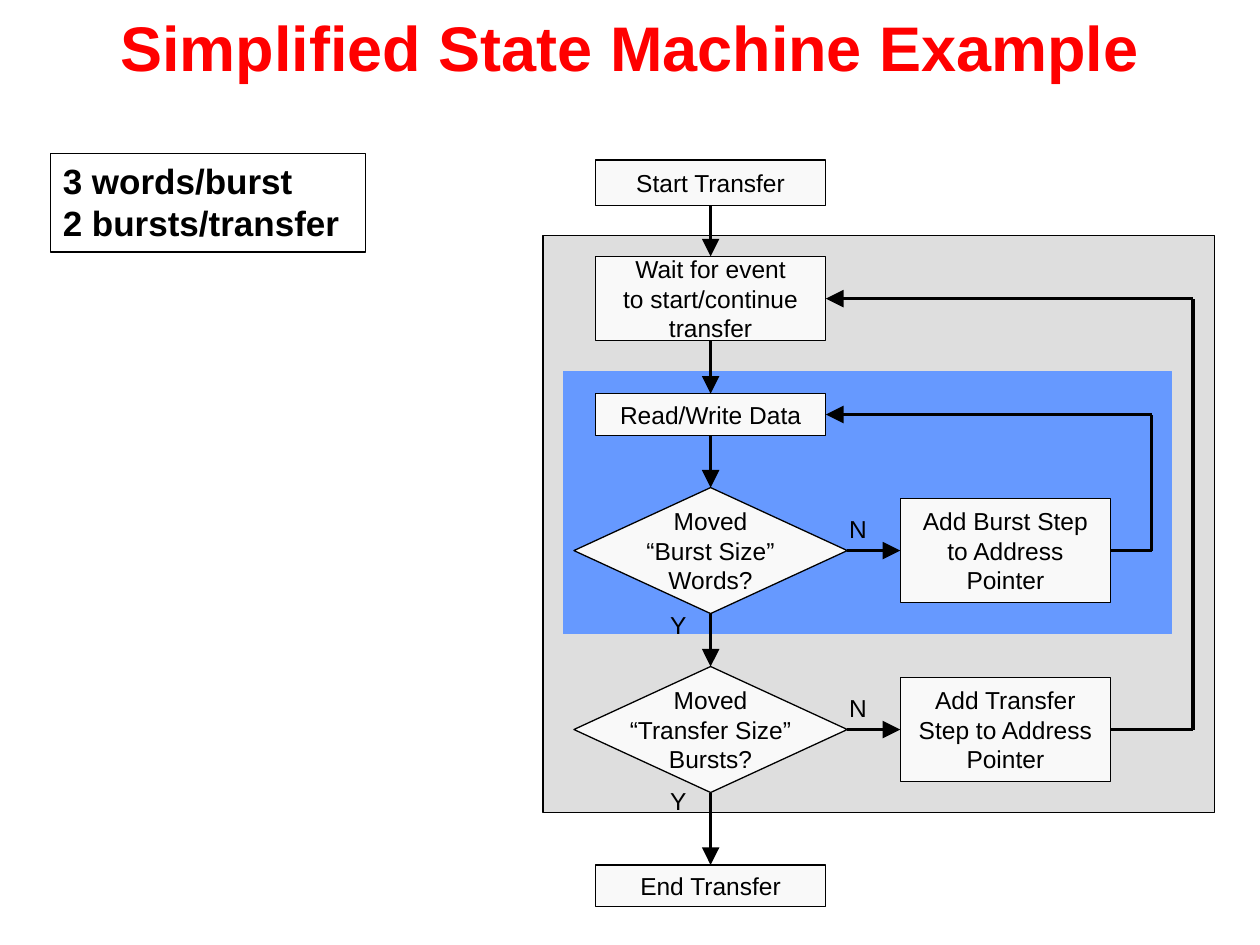
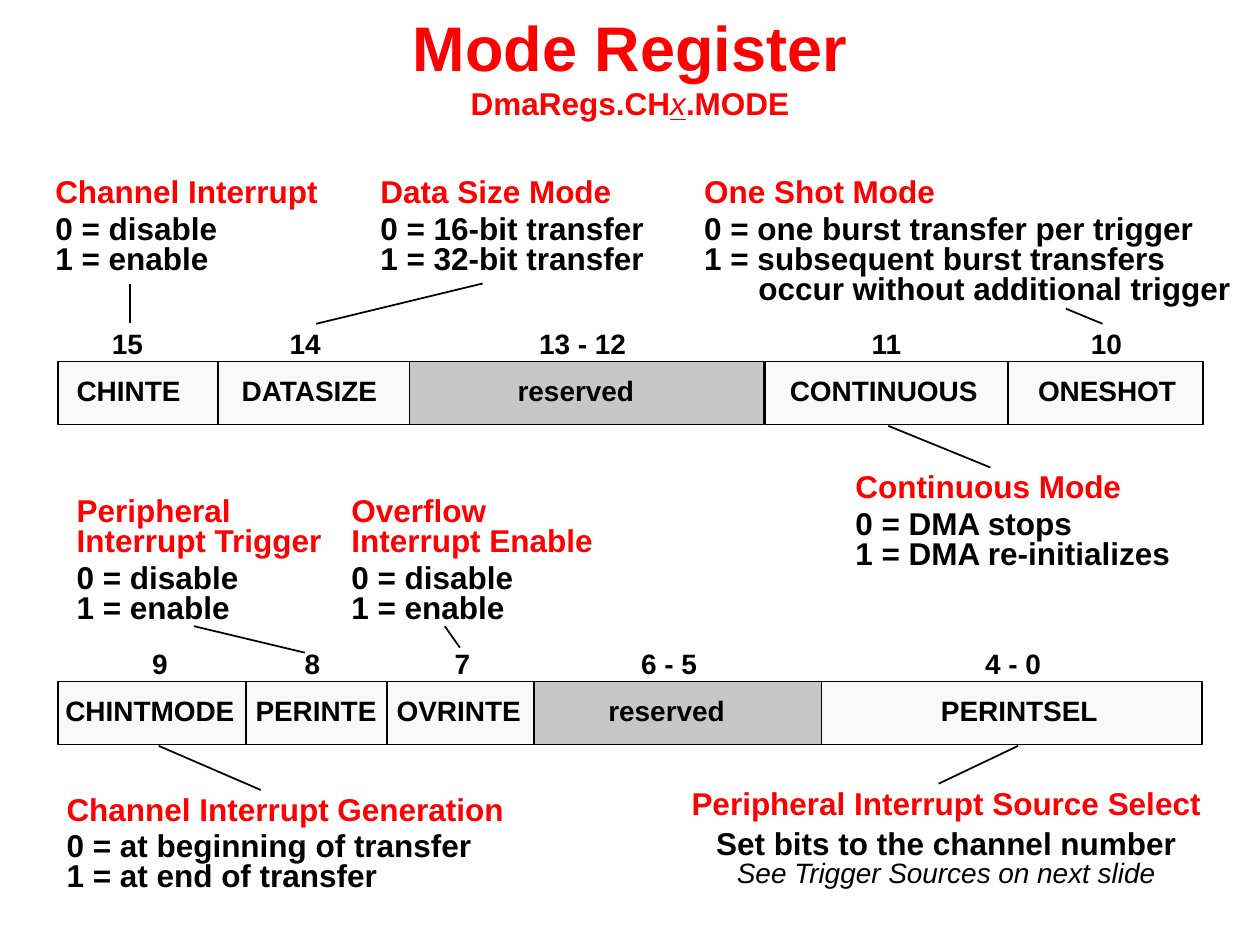
from dataclasses import dataclass
from lxml import etree
from pptx import Presentation
from pptx.dml.color import RGBColor
from pptx.enum.shapes import MSO_CONNECTOR, MSO_SHAPE
from pptx.enum.text import MSO_ANCHOR, MSO_AUTO_SIZE, PP_ALIGN
from pptx.oxml.ns import qn
from pptx.util import Inches, Pt


@dataclass(frozen=True)
class Theme:
    font: str = "Arial"
    red: str = "FF0000"
    black: str = "000000"
    box: str = "F9F9F9"
    reserved: str = "C7C7C7"
    outer_loop: str = "DEDEDE"
    inner_loop: str = "6699FF"
    title: int = 36
    note: int = 20
    callout: int = 18
    field: int = 16
    flow: int = 14
    outline: float = 0.75
    rule: float = 1
    arrow: float = 2


THEME = Theme()
TOP, LEFT, BOTTOM, RIGHT = range(4)

# ---- Content: state machine ----
MACHINE_TITLE = "Simplified State Machine Example"
SETTINGS = ["3 words/burst", "2 bursts/transfer"]
LOOP_PANELS = [  # left, top, width, height, fill, outline colour, outline width
    (4.31, 1.87, 5.33, 4.58, THEME.outer_loop, THEME.black, 0.75),
    (4.47, 2.95, 4.83, 2.08, THEME.inner_loop, THEME.inner_loop, 0.5),
]
MAIN_X, STEP_X = 5.64, 7.98
STEP_W, STEP_H = 1.67, 0.83
BOX_W, DIAMOND_W, DIAMOND_H = 1.83, 2.17, 1
BURST_Y, TRANSFER_Y = 4.37, 5.79
RECT, DIAMOND = MSO_SHAPE.RECTANGLE, MSO_SHAPE.DIAMOND
STATES = {  # preset, centre x, centre y, width, height, lines
    "start": (RECT, MAIN_X, 1.45, BOX_W, 0.36, ["Start Transfer"]),
    "wait": (RECT, MAIN_X, 2.37, BOX_W, 0.67,
             ["Wait for event", "to start/continue", "transfer"]),
    "read": (RECT, MAIN_X, 3.29, BOX_W, 0.33, ["Read/Write Data"]),
    "burst": (DIAMOND, MAIN_X, BURST_Y, DIAMOND_W, DIAMOND_H,
              ["Moved", "“Burst Size”", "Words?"]),
    "transfer": (DIAMOND, MAIN_X, TRANSFER_Y, DIAMOND_W, DIAMOND_H,
                 ["Moved", "“Transfer Size”", "Bursts?"]),
    "end": (RECT, MAIN_X, 7.03, BOX_W, 0.33, ["End Transfer"]),
    "burst step": (RECT, STEP_X, BURST_Y, STEP_W, STEP_H,
                   ["Add Burst Step", "to Address", "Pointer"]),
    "transfer step": (RECT, STEP_X, TRANSFER_Y, STEP_W, STEP_H,
                      ["Add Transfer", "Step to Address", "Pointer"]),
}
MAIN_FLOW = ["start", "wait", "read", "burst", "transfer", "end"]
NO_BRANCHES = [("burst", "burst step"), ("transfer", "transfer step")]
LOOPS = [("burst step", "read", 9.14), ("transfer step", "wait", 9.47)]
ANSWERS = [("Y", 5.22, 4.79), ("Y", 5.22, 6.19), ("N", 6.64, 4.03), ("N", 6.64, 5.45)]

# ---- Content: mode register ----
REGISTER_TITLE = "Mode Register"
REGISTER_NAME = [("DmaRegs.CH", {}), ("x", dict(bold=False, italic=True, underline=True)),
                 (".MODE", {})]
BAND_H, LABEL_H = 0.5, 0.31
REGISTER_ROWS = [
    dict(
        top=2.87,
        bands=[(0.46, 3.25, THEME.box), (3.25, 6.06, THEME.reserved), (6.07, 9.55, THEME.box)],
        dividers=[1.73, 8],
        fields=[  # bits, left, width, name, left, width
            ("15", 0.79, 0.45, "CHINTE", 0.51, 1.03),
            ("14", 2.2, 0.45, "DATASIZE", 1.82, 1.31),
            ("13 - 12", 4.18, 0.9, "reserved", 4.01, 1.13),
            ("11", 6.82, 0.45, "CONTINUOUS", 6.17, 1.69),
            ("10", 8.56, 0.45, "ONESHOT", 8.14, 1.3),
        ],
    ),
    dict(
        top=5.41,
        bands=[(0.46, 4.24, THEME.box), (4.24, 6.52, THEME.reserved), (6.52, 9.54, THEME.box)],
        dividers=[1.95, 3.07],
        fields=[
            ("9", 1.11, 0.32, "CHINTMODE", 0.42, 1.55),
            ("8", 2.32, 0.32, "PERINTE", 1.93, 1.16),
            ("7", 3.51, 0.32, "OVRINTE", 3.05, 1.19),
            ("6 - 5", 4.99, 0.65, "reserved", 4.73, 1.13),
            ("4 - 0", 7.72, 0.65, "PERINTSEL", 7.37, 1.5),
        ],
    ),
]
ON_OFF = ["0 = disable", "1 = enable"]
CALLOUTS = [  # heading, settings, box, wraps, hanging indent, leader ends
    ("Channel Interrupt", ON_OFF, (0.34, 1.37, 2.28, 0.88), False, 0,
     (1.03, 2.56, 1.03, 2.25)),
    ("Data Size Mode", ["0 = 16-bit transfer", "1 = 32-bit transfer"],
     (2.92, 1.37, 2.29, 0.88), False, 0, (3.83, 2.25, 2.51, 2.57)),
    ("One Shot Mode", ["0 = one burst transfer per trigger",
                       "1 = subsequent burst transfers occur without additional trigger"],
     (5.49, 1.37, 4.39, 1.12), True, 0.43, (8.75, 2.57, 8.46, 2.45)),
    ("Continuous Mode", ["0 = DMA stops", "1 = DMA re-initializes"],
     (6.69, 3.71, 2.71, 0.88), False, 0, (7.05, 3.38, 7.86, 3.71)),
    ("Peripheral Interrupt Trigger", ON_OFF, (0.51, 3.9, 2.42, 1.12), True, 0,
     (2.42, 5.18, 1.54, 4.97)),
    ("Overflow Interrupt Enable", ON_OFF, (2.69, 3.9, 2.28, 1.12), True, 0,
     (3.53, 4.97, 3.65, 5.14)),
    ("Channel Interrupt Generation",
     ["0 = at beginning of transfer", "1 = at end of transfer"],
     (0.43, 6.27, 3.67, 0.88), False, 0, (2.07, 6.27, 1.26, 5.92)),
]
SOURCE_SELECT = ("Peripheral Interrupt Source Select", "Set bits to the channel number",
                 "See Trigger Sources on next slide")
SOURCE_BOX = (5.38, 6.22, 4.26, 0.89)
SOURCE_LEADER = (8.08, 5.92, 7.45, 6.22)


# ---- Shared parts ----
def add_run(paragraph, text, size, color=THEME.black, bold=False, italic=False, underline=False):
    run = paragraph.add_run()
    run.text = text
    font = run.font
    font.name, font.size, font.color.rgb = THEME.font, Pt(size), RGBColor.from_string(color)
    font.bold, font.italic, font.underline = bold, italic, underline


def add_paragraph(frame, align=PP_ALIGN.LEFT, spacing=None):
    """Return the empty first paragraph, or a new one after it."""
    first = frame.paragraphs[0]
    paragraph = frame.add_paragraph() if first.runs else first
    paragraph.alignment = align
    if spacing:
        paragraph.line_spacing = spacing
    return paragraph


def add_text(slide, box, wrap=False, anchor=MSO_ANCHOR.TOP, grow=True):
    frame = slide.shapes.add_textbox(*map(Inches, box)).text_frame
    frame.word_wrap = wrap
    frame.vertical_anchor = anchor
    frame.auto_size = MSO_AUTO_SIZE.SHAPE_TO_FIT_TEXT if grow else MSO_AUTO_SIZE.NONE
    return frame


def add_box(slide, preset, box, fill=None, line=THEME.black, width=THEME.outline):
    shape = slide.shapes.add_shape(preset, *map(Inches, box))
    shape.shadow.inherit = False
    if fill:
        shape.fill.solid()
        shape.fill.fore_color.rgb = RGBColor.from_string(fill)
    else:
        shape.fill.background()
    shape.line.color.rgb = RGBColor.from_string(line)
    shape.line.width = Pt(width)
    return shape


def add_line(slide, ends=(0, 0, 0, 0), width=THEME.rule, arrow=False, begin=None, end=None):
    """Draw a line; begin and end are (shape, side) pairs to join."""
    line = slide.shapes.add_connector(MSO_CONNECTOR.STRAIGHT, *map(Inches, ends))
    if begin:
        line.begin_connect(*begin)
    if end:
        line.end_connect(*end)
    line.line.color.rgb = RGBColor.from_string(THEME.black)
    line.line.width = Pt(width)
    properties = line._element.spPr
    if arrow:
        etree.SubElement(properties.find(qn("a:ln")), qn("a:tailEnd"),
                         type="triangle", w="lg", len="lg")
    etree.SubElement(properties, qn("a:effectLst"))


def add_title(slide, title, height, subtitle=()):
    frame = add_text(slide, (0, 0, 10, height), True, grow=False)
    frame.margin_top = Inches(0.07)
    paragraph = add_paragraph(frame, PP_ALIGN.CENTER)
    add_run(paragraph, title, THEME.title, THEME.red, True)
    if subtitle:
        paragraph.add_line_break()
    for text, style in subtitle:
        add_run(paragraph, text, THEME.callout, THEME.red, **{"bold": True, **style})


# ---- Slide 1 ----
def build_state_machine(slide):
    add_title(slide, MACHINE_TITLE, 0.81)
    for *box, fill, line, width in LOOP_PANELS:
        add_box(slide, RECT, box, fill, line, width)

    settings = add_box(slide, RECT, (0.4, 1.22, 2.5, 0.78)).text_frame
    settings.vertical_anchor = MSO_ANCHOR.TOP
    settings.auto_size = MSO_AUTO_SIZE.SHAPE_TO_FIT_TEXT
    for text in SETTINGS:
        add_run(add_paragraph(settings), text, THEME.note, bold=True)

    states = {}
    for key, (preset, x, y, w, h, lines) in STATES.items():
        states[key] = add_box(slide, preset, (x - w / 2, y - h / 2, w, h), THEME.box)
        frame = states[key].text_frame
        frame.word_wrap = False
        frame.vertical_anchor = MSO_ANCHOR.MIDDLE
        for text in lines:
            add_run(add_paragraph(frame, PP_ALIGN.CENTER), text, THEME.flow)

    # Forward arrows
    for upper, lower in zip(MAIN_FLOW, MAIN_FLOW[1:]):
        add_line(slide, width=THEME.arrow, arrow=True,
                 begin=(states[upper], BOTTOM), end=(states[lower], TOP))
    for question, step in NO_BRANCHES:
        add_line(slide, width=THEME.arrow, arrow=True,
                 begin=(states[question], RIGHT), end=(states[step], LEFT))

    # Return loops
    for step, target, x in LOOPS:
        low, high = STATES[step][2], STATES[target][2]
        add_line(slide, (x, low, x, low), THEME.arrow, begin=(states[step], RIGHT))
        add_line(slide, (x, low, x, high), THEME.arrow)
        add_line(slide, (x, high, x, high), THEME.arrow, True, end=(states[target], RIGHT))

    for text, left, top in ANSWERS:
        add_run(add_paragraph(add_text(slide, (left, top, 0.33, 0.33))), text, THEME.flow)


# ---- Slide 2 ----
def build_mode_register(slide):
    add_title(slide, REGISTER_TITLE, 1.06, REGISTER_NAME)
    for row in REGISTER_ROWS:
        top = row["top"]
        for left, right, fill in row["bands"]:
            add_box(slide, RECT, (left, top, right - left, BAND_H), fill, width=THEME.rule)
        for x in row["dividers"]:
            add_line(slide, (x, top, x, top + BAND_H))
        for bits, bits_left, bits_w, name, name_left, name_w in row["fields"]:
            for text, left, y, w in ((bits, bits_left, top - 0.28, bits_w),
                                     (name, name_left, top + 0.1, name_w)):
                label = add_text(slide, (left, y, w, LABEL_H))
                add_run(add_paragraph(label, spacing=0.8), text, THEME.field, bold=True)

    # Callouts with their leader lines
    for heading, settings, box, wrap, indent, leader in CALLOUTS:
        frame = add_text(slide, box, wrap, MSO_ANCHOR.MIDDLE)
        for text in [heading, *settings]:
            paragraph = add_paragraph(frame, spacing=0.8)
            if indent:
                properties = paragraph._p.get_or_add_pPr()
                properties.set("marL", str(Inches(indent)))
                properties.set("indent", str(-Inches(indent)))
            color = THEME.red if text == heading else THEME.black
            add_run(paragraph, text, THEME.callout, color, True)
        frame.paragraphs[0].space_after = Pt(3.6)
        add_line(slide, leader)

    heading, setting, reference = SOURCE_SELECT
    frame = add_text(slide, SOURCE_BOX, True, MSO_ANCHOR.MIDDLE)
    add_run(add_paragraph(frame, PP_ALIGN.CENTER, 0.8), heading, THEME.callout, THEME.red, True)
    paragraph = add_paragraph(frame, PP_ALIGN.CENTER, 0.8)
    paragraph.space_before = Pt(6)
    add_run(paragraph, setting, THEME.callout, bold=True)
    add_run(add_paragraph(frame, PP_ALIGN.CENTER, 0.8), reference, THEME.field, italic=True)
    add_line(slide, SOURCE_LEADER)


def main():
    deck = Presentation()
    deck.slide_width, deck.slide_height = Inches(10), Inches(7.5)
    for build in (build_state_machine, build_mode_register):
        build(deck.slides.add_slide(deck.slide_layouts[6]))
    deck.save("out.pptx")


if __name__ == "__main__":
    main()
